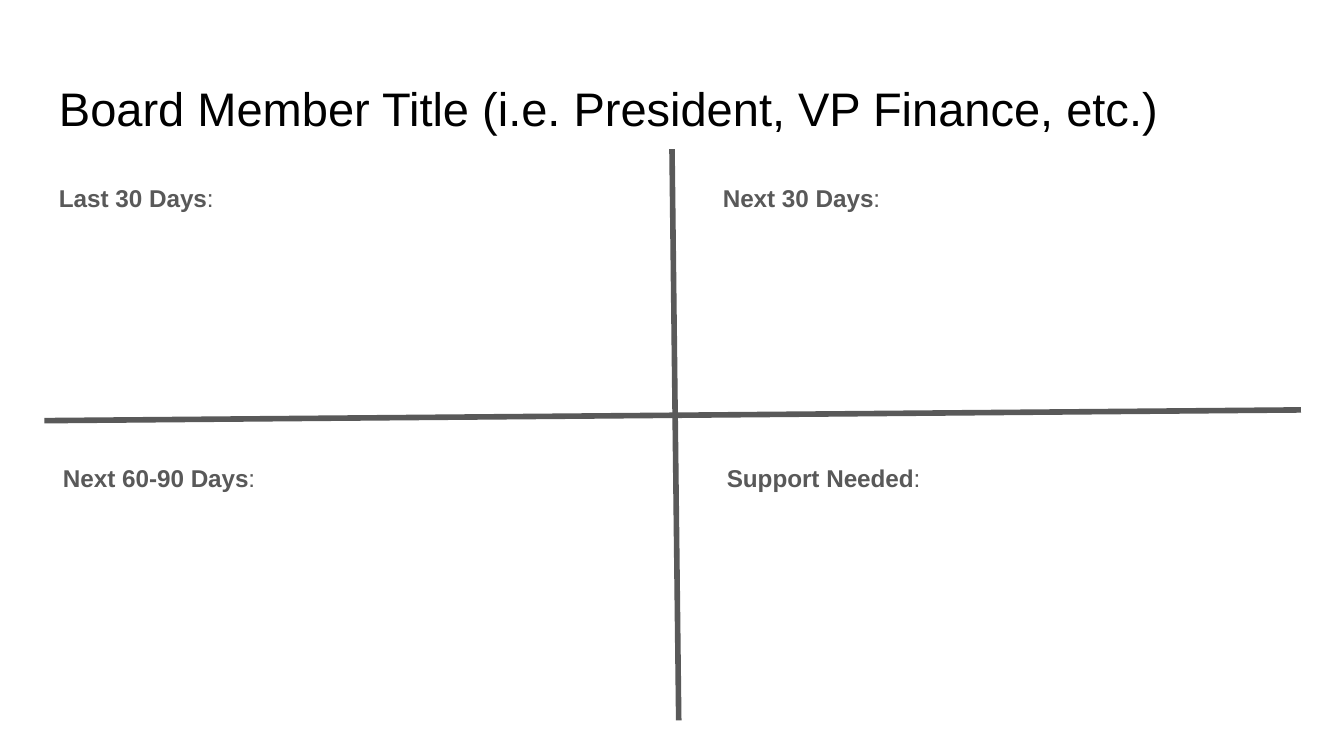
from dataclasses import dataclass

from pptx import Presentation
from pptx import util as u
from pptx.dml.color import RGBColor
from pptx.enum import shapes, text
from pptx.oxml.ns import qn
from lxml import etree


@dataclass(frozen=True)
class Theme:
    font: str = "Arial"
    ink: RGBColor = RGBColor(0, 0, 0)
    gray: RGBColor = RGBColor(0x59, 0x59, 0x59)
    title: float = 25.2
    body: float = 13
    rule: float = 3
    pad: float = 0.1


THEME = Theme()


def add_text(slide, box, parts, size, color, anchor):
    """Place one line of (words, bold) parts in a padded box."""
    frame = slide.shapes.add_textbox(*map(u.Inches, box)).text_frame
    frame.word_wrap = True
    frame.vertical_anchor = anchor
    frame.margin_left = frame.margin_right = u.Inches(THEME.pad)
    frame.margin_top = frame.margin_bottom = u.Inches(THEME.pad)
    line = frame.paragraphs[0]
    for words, bold in parts:
        run = line.add_run()
        run.text = words
        run.font.name = THEME.font
        run.font.size = u.Pt(size)
        run.font.bold = bold
        run.font.color.rgb = color
    return line


def add_title(slide, box, words):
    add_text(slide, box, [(words, False)], THEME.title, THEME.ink,
             text.MSO_ANCHOR.MIDDLE)


def add_panel(slide, box, label):
    line = add_text(slide, box, [(label, True), (":", False)],
                    THEME.body, THEME.gray, text.MSO_ANCHOR.TOP)
    line.line_spacing = 1.03


def add_rule(slide, start, end):
    rule = slide.shapes.add_connector(
        shapes.MSO_CONNECTOR.STRAIGHT, *map(u.Inches, start + end))
    rule.line.color.rgb = THEME.gray
    rule.line.width = u.Pt(THEME.rule)
    etree.SubElement(rule._element.spPr, qn("a:effectLst"))


def add_grid(slide, box, rows):
    """Four panels, the lower row shifted slightly right, and a cross."""
    left, top, width, height = box
    wide, high, shift = 4.37, 1.66, 0.03
    step, drop = width - wide, height - high
    for r, labels in enumerate(rows):
        for c, label in enumerate(labels):
            add_panel(slide, (left + c * step + r * shift, top + r * drop,
                              wide, high), label)

    # Hand-drawn cross, slightly tilted
    add_rule(slide, (left + 4.66, top - 0.15), (left + 4.71, top + 4.1))
    add_rule(slide, (left + 9.34, top + 1.79), (left - 0.01, top + 1.87))


def main():
    # Widescreen, 16 to 9
    deck = Presentation()
    deck.slide_width = u.Inches(10)
    deck.slide_height = deck.slide_width * 9 // 16
    slide = deck.slides.add_slide(deck.slide_layouts[6])

    add_title(slide, (0.34, 0.49, 9.32, 0.63),
              "Board Member Title (i.e. President, VP Finance, etc.)")
    add_grid(slide, (0.34, 1.26, 9.31, 3.74),
             [("Last 30 Days", "Next 30 Days"),
              ("Next 60-90 Days", "Support Needed")])

    deck.save("out.pptx")


if __name__ == "__main__":
    main()
